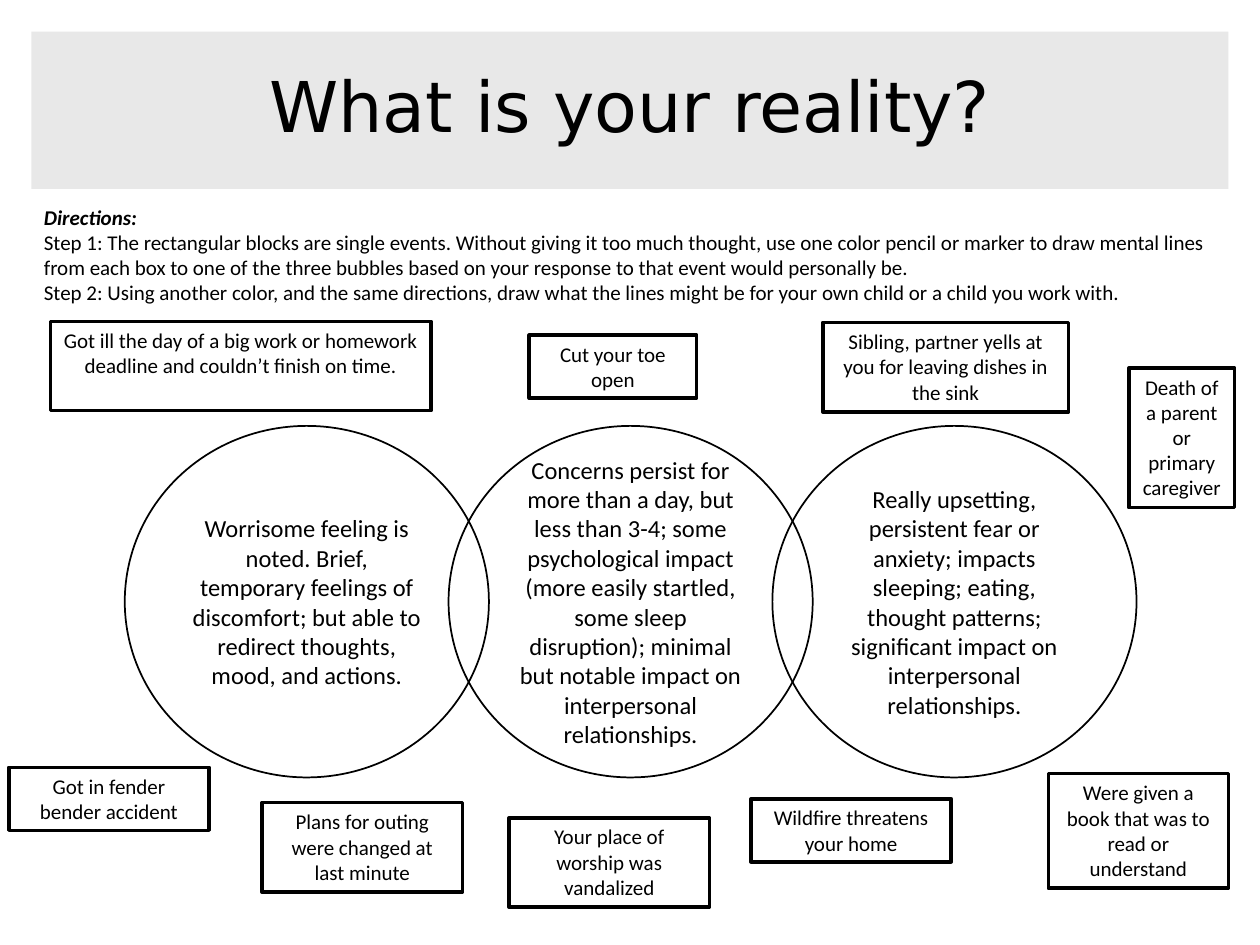
from dataclasses import dataclass

import pptx
import pptx.dml.color
import pptx.enum.shapes
import pptx.enum.text
import pptx.util
from pptx.util import Inches

SHAPE = pptx.enum.shapes.MSO_SHAPE
ALIGN = pptx.enum.text.PP_ALIGN
ANCHOR = pptx.enum.text.MSO_ANCHOR


@dataclass(frozen=True)
class Theme:
    ink: str = "000000"
    band: str = "E8E8E8"
    title_font: str = "DejaVu Sans"
    body_font: str = "Calibri"
    title_size: int = 40
    bubble_size: int = 14
    body_size: int = 12
    bubble_line: int = 1
    event_line: int = 2


THEME = Theme()

TITLE = "What is your reality?"
DIRECTIONS = [
    "Directions:",
    "Step 1: The rectangular blocks are single events. Without giving it too much thought, "
    "use one color pencil or marker to draw mental lines from each box to one of the three "
    "bubbles based on your response to that event would personally be.",
    "Step 2: Using another color, and the same directions, draw what the lines might be "
    "for your own child or a child you work with.",
]

BUBBLE_LEFT, BUBBLE_TOP, BUBBLE_STEP = 0.99, 3.38, 2.57
BUBBLE_WIDTH, BUBBLE_HEIGHT = 2.89, 2.79
BUBBLES = [
    "Worrisome feeling is noted. Brief, temporary feelings of discomfort; but able to "
    "redirect thoughts, mood, and actions.",
    "Concerns persist for more than a day, but less than 3-4; some psychological impact "
    "(more easily startled, some sleep disruption); minimal but notable impact on "
    "interpersonal relationships.",
    "Really upsetting, persistent fear or anxiety; impacts sleeping; eating, thought "
    "patterns; significant impact on interpersonal relationships.",
]

# left, top, width, height, text
EVENTS = [
    (0.4, 2.55, 3.02, 0.71,
     "Got ill the day of a big work or homework deadline and couldn’t finish on time."),
    (4.2, 2.66, 1.33, 0.5, "Cut your toe open"),
    (6.53, 2.56, 1.95, 0.71, "Sibling, partner yells at you for leaving dishes in the sink"),
    (8.96, 2.92, 0.84, 1.11, "Death of a parent or primary caregiver"),
    (8.32, 6.14, 1.43, 0.91, "Were given a book that was to read or understand"),
    (5.96, 6.34, 1.59, 0.5, "Wildfire threatens your home"),
    (4.04, 6.49, 1.59, 0.71, "Your place of worship was vandalized"),
    (2.08, 6.37, 1.59, 0.71, "Plans for outing were changed at last minute"),
    (0.07, 6.09, 1.59, 0.5, "Got in fender bender accident"),
]


def rgb(value):
    return pptx.dml.color.RGBColor.from_string(value)


def add_run(p, text, size, font=THEME.body_font, heading=False):
    r = p.add_run()
    r.text = text
    r.font.name = font
    r.font.size = pptx.util.Pt(size)
    r.font.bold = r.font.italic = heading
    r.font.color.rgb = rgb(THEME.ink)


def add_centred_shape(slide, kind, box, anchor):
    """Add a plain shape and return it with its centred, empty paragraph."""
    sp = slide.shapes.add_shape(kind, *map(Inches, box))
    sp.shadow.inherit = False
    sp.fill.background()
    sp.line.fill.background()
    tf = sp.text_frame
    tf.word_wrap = True
    tf.vertical_anchor = anchor
    p = tf.paragraphs[0]
    p.alignment = ALIGN.CENTER
    return sp, p


def set_outline(sp, width):
    sp.line.color.rgb = rgb(THEME.ink)
    sp.line.width = pptx.util.Pt(width)


def add_title(slide):
    sp, p = add_centred_shape(slide, SHAPE.RECTANGLE, (0.25, 0.25, 9.5, 1.25), ANCHOR.MIDDLE)
    sp.fill.solid()
    sp.fill.fore_color.rgb = rgb(THEME.band)
    p.line_spacing = 0.9
    add_run(p, TITLE, THEME.title_size, THEME.title_font)


def add_directions(slide):
    box = (0.25, 1.57, 9.5, 0.91)
    tf = slide.shapes.add_textbox(*map(Inches, box)).text_frame
    tf.word_wrap = True
    for i, text in enumerate(DIRECTIONS):
        p = tf.add_paragraph() if i else tf.paragraphs[0]
        add_run(p, text, THEME.body_size, heading=i == 0)


def add_bubble(slide, index, text):
    box = (BUBBLE_LEFT + index * BUBBLE_STEP, BUBBLE_TOP, BUBBLE_WIDTH, BUBBLE_HEIGHT)
    sp, p = add_centred_shape(slide, SHAPE.OVAL, box, ANCHOR.MIDDLE)
    set_outline(sp, THEME.bubble_line)
    add_run(p, text, THEME.bubble_size)


def add_event(slide, box, text):
    sp, p = add_centred_shape(slide, SHAPE.RECTANGLE, box, ANCHOR.TOP)
    set_outline(sp, THEME.event_line)
    add_run(p, text, THEME.body_size)


def main():
    prs = pptx.Presentation()
    prs.slide_width, prs.slide_height = Inches(10), Inches(7.5)
    slide = prs.slides.add_slide(prs.slide_layouts[6])
    add_title(slide)
    add_directions(slide)
    for i, text in enumerate(BUBBLES):
        add_bubble(slide, i, text)
    for *box, text in EVENTS:
        add_event(slide, box, text)
    prs.save("out.pptx")


if __name__ == "__main__":
    main()
